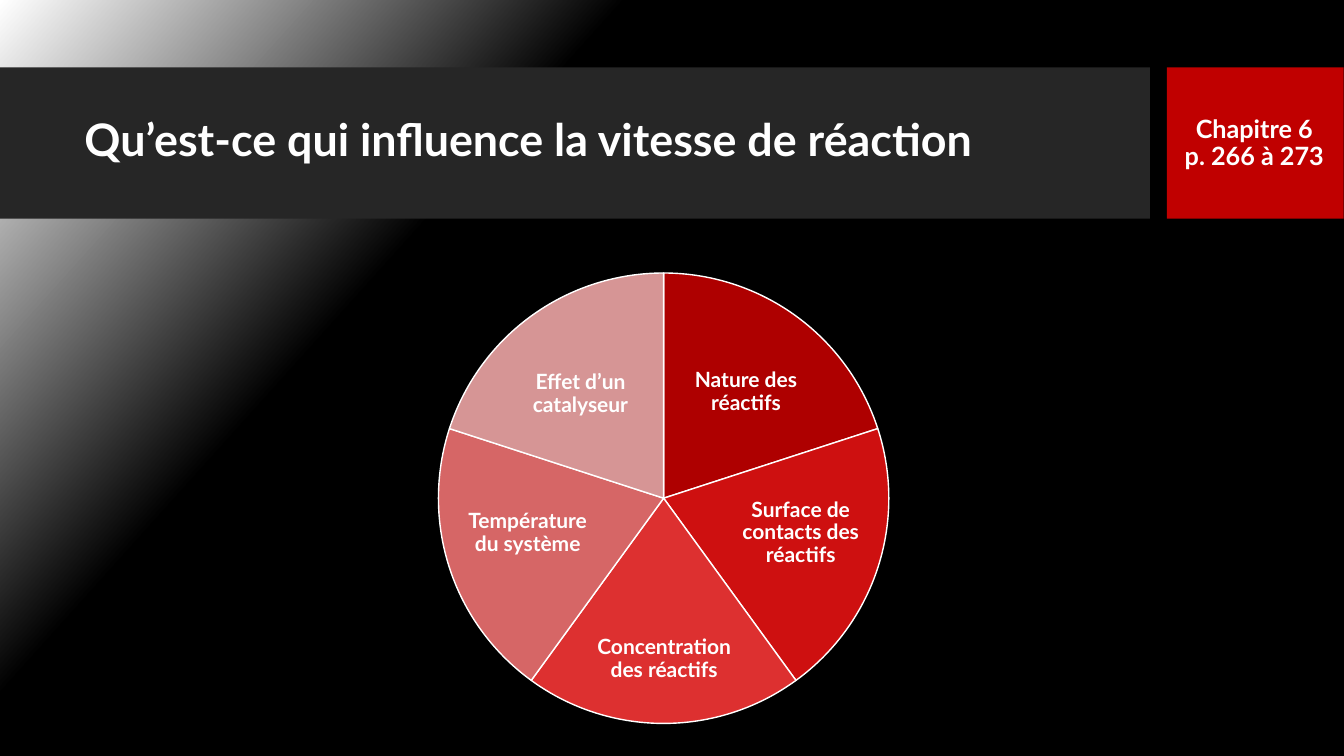
from copy import deepcopy
from dataclasses import dataclass

from pptx import Presentation
from pptx.dml.color import RGBColor
from pptx.enum.shapes import MSO_SHAPE
from pptx.enum.text import MSO_ANCHOR, PP_ALIGN
from pptx.oxml.ns import qn
from pptx.util import Cm, Pt

RECTANGLE, PIE = MSO_SHAPE.RECTANGLE, MSO_SHAPE.PIE
MIDDLE = MSO_ANCHOR.MIDDLE
LEFT, CENTER = PP_ALIGN.LEFT, PP_ALIGN.CENTER

COLORS = {
    "white": "FFFFFF",
    "black": "000000",
    "band": "262626",
    "tab": "C00000",
    "nature": "AE0000",
    "surface": "CE1010",
    "concentration": "DD3030",
    "temperature": "D66666",
    "catalyst": "D69595",
}
FONT = {"name": "Lato", "bold": True}
SIDES = ("left", "right", "top", "bottom")
ANGLE_UNIT = 0.6
PIE_START = 270


@dataclass(frozen=True)
class Area:
    left: float
    top: float
    width: float
    height: float

    def lengths(self) -> tuple:
        return tuple(Cm(v) for v in (self.left, self.top, self.width, self.height))


@dataclass(frozen=True)
class Panel:
    area: Area
    color: str


@dataclass(frozen=True)
class Label:
    area: Area
    lines: tuple
    size: float
    align: PP_ALIGN = CENTER
    inset: float | None = None


@dataclass(frozen=True)
class Slice:
    color: str
    text: str
    area: Area


PANELS = (
    Panel(Area(0, 1.7, 28.98, 3.81), "band"),
    Panel(Area(29.41, 1.7, 4.45, 3.81), "tab"),
)
HEADINGS = (
    Label(Area(1.88, 2.08, 26.7, 3), ("Qu’est-ce qui influence la vitesse de réaction",), 32, LEFT),
    Label(Area(29.36, 1.7, 4.5, 3.84), ("Chapitre 6", "p. 266 à 273"), 18),
)
PIE_AREA = Area(11.05, 6.88, 11.35, 11.35)
SLICES = (
    Slice("nature", "Nature des réactifs", Area(16.87, 8.56, 3.86, 2.64)),
    Slice("surface", "Surface de contacts des réactifs", Area(18.49, 12.01, 3.38, 2.84)),
    Slice("concentration", "Concentration des réactifs", Area(14.71, 15.39, 4.06, 2.44)),
    Slice("temperature", "Température du système", Area(11.61, 12.01, 3.38, 2.84)),
    Slice("catalyst", "Effet d’un catalyseur", Area(12.7, 8.61, 3.86, 2.64)),
)


def color_of(name: str) -> RGBColor:
    return RGBColor.from_string(COLORS[name])


def paint_background(page) -> None:
    fill = page.background.fill
    fill.gradient()
    fill.gradient_angle = 360 - 42
    stop_list = page.element.find(f".//{qn('a:gsLst')}")
    stop_list.append(deepcopy(stop_list[-1]))
    stops = ((0, "white"), (0.31, "black"), (1, "black"))
    for stop, (position, color) in zip(fill.gradient_stops, stops):
        stop.position = position
        stop.color.rgb = color_of(color)


def add_filled(page, kind: MSO_SHAPE, area: Area, color: str):
    shape = page.shapes.add_shape(kind, *area.lengths())
    shape.shadow.inherit = False
    shape.fill.solid()
    shape.fill.fore_color.rgb = color_of(color)
    return shape


def add_panel(page, panel: Panel) -> None:
    add_filled(page, RECTANGLE, panel.area, panel.color).line.fill.background()


def add_label(page, label: Label) -> None:
    frame = page.shapes.add_textbox(*label.area.lengths()).text_frame
    frame.word_wrap = True
    frame.vertical_anchor = MIDDLE
    if label.inset is not None:
        for side in SIDES:
            setattr(frame, f"margin_{side}", Cm(label.inset))
    for index, line in enumerate(label.lines):
        para = frame.add_paragraph() if index else frame.paragraphs[0]
        para.alignment = label.align
        para.line_spacing = 0.9
        span = para.add_run()
        span.text = line
        for name, value in {**FONT, "size": Pt(label.size)}.items():
            setattr(span.font, name, value)
        span.font.color.rgb = color_of("white")


def add_slice(page, index: int, part: Slice) -> None:
    sweep = 360 / len(SLICES)
    wedge = add_filled(page, PIE, PIE_AREA, part.color)
    for edge in range(2):
        angle = (PIE_START + (index + edge) * sweep) % 360
        wedge.adjustments[edge] = angle * ANGLE_UNIT
    wedge.line.color.rgb = color_of("white")
    wedge.line.width = Pt(1)
    add_label(page, Label(part.area, (part.text,), 15, inset=0.05))


def main() -> None:
    deck = Presentation()
    deck.slide_width, deck.slide_height = Cm(33.87), Cm(19.05)
    page = deck.slides.add_slide(deck.slide_layouts[6])
    paint_background(page)
    for panel in PANELS:
        add_panel(page, panel)
    for heading in HEADINGS:
        add_label(page, heading)
    for index, part in enumerate(SLICES):
        add_slice(page, index, part)
    deck.save("out.pptx")


if __name__ == "__main__":
    main()
